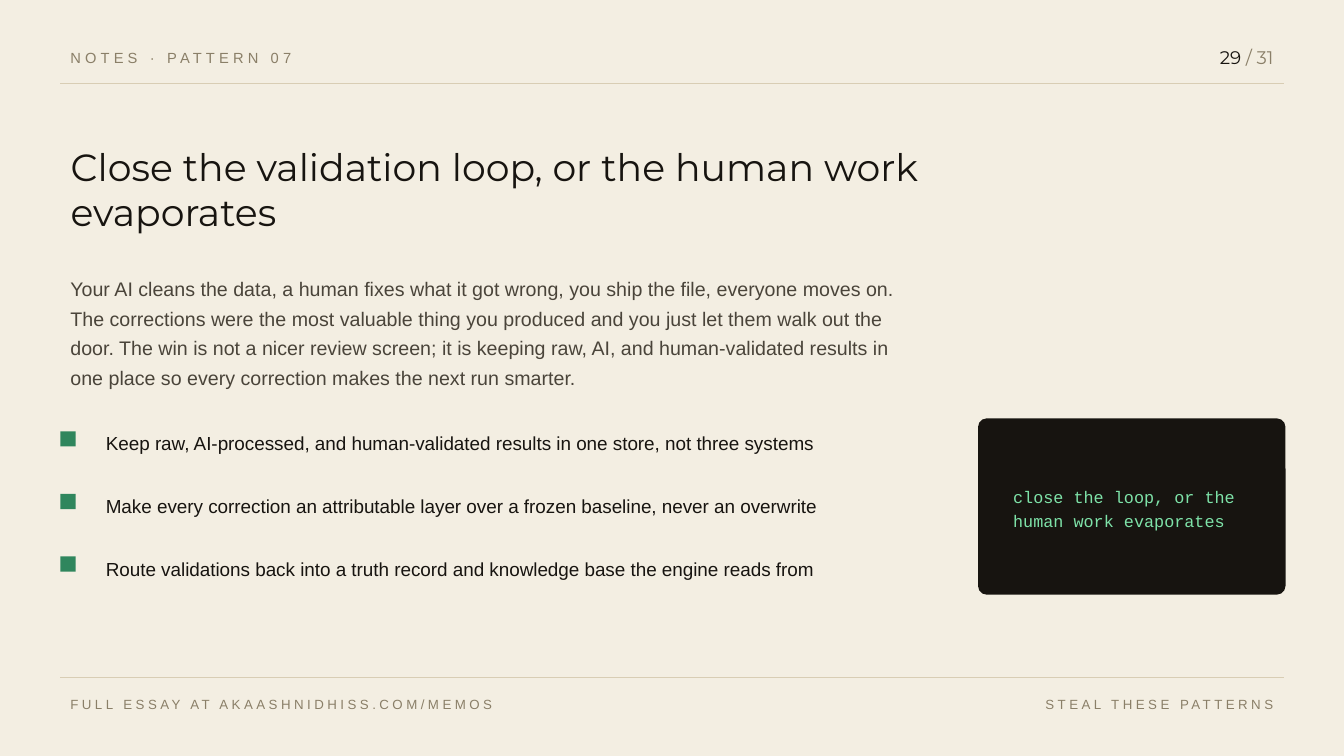
from dataclasses import dataclass

from lxml.etree import SubElement
from pptx import Presentation
from pptx.dml.color import RGBColor as Color
from pptx.enum.shapes import MSO_CONNECTOR as Connector, MSO_SHAPE as Shape
from pptx.enum.text import MSO_ANCHOR as Anchor, MSO_AUTO_SIZE as AutoSize, PP_ALIGN as Align
from pptx.oxml.ns import qn
from pptx.util import Inches, Pt


@dataclass(frozen=True)
class Theme:
    paper: Color = Color.from_string("F3EEE2")
    ink: Color = Color.from_string("171410")
    body: Color = Color.from_string("4A443A")
    muted: Color = Color.from_string("8A7F68")
    rule: Color = Color.from_string("D8CDB4")
    marker: Color = Color.from_string("2F865D")
    code: Color = Color.from_string("7EE2A8")
    display_font: str = "Montserrat"
    text_font: str = "Arial"
    code_font: str = "Courier New"
    title_size: float = 27
    lead_size: float = 14
    list_size: float = 13.5
    page_size: float = 13
    code_size: float = 12
    header_size: float = 10.5
    footer_size: float = 9.5


theme = Theme()

# Grid of square cells, ten to the inch
COLUMNS, ROWS = 133.3, 75
MARGIN = 6
RIGHT = COLUMNS - MARGIN
CONTENT = RIGHT - MARGIN
LIST_TOP, LIST_PITCH, LIST_ROW = 41.5, 6.2, 5


def cells(*counts):
    return [Inches(count / 10) for count in counts]


def write(shape, paragraphs, font, size, line_spacing=1.0, gap=0, align=Align.LEFT, tracking=0):
    """Fill a shape with paragraphs, each a list of (text, colour) runs."""
    frame = shape.text_frame
    frame.word_wrap = True
    frame.auto_size = AutoSize.NONE
    frame.vertical_anchor = Anchor.MIDDLE
    for index, runs in enumerate(paragraphs):
        paragraph = frame.add_paragraph() if index else frame.paragraphs[0]
        properties = paragraph._p.get_or_add_pPr()
        properties.set("marL", "0")
        properties.set("indent", "0")
        SubElement(properties, qn("a:buNone"))
        paragraph.alignment = align
        paragraph.line_spacing = line_spacing
        paragraph.space_before = Pt(gap if index else 0)
        for text, color in runs:
            run = paragraph.add_run()
            run.text = text
            run.font.name = font
            run.font.size = Pt(size)
            run.font.color.rgb = color
            if tracking:
                run._r.get_or_add_rPr().set("spc", str(int(tracking * 100)))


presentation = Presentation()
presentation.slide_width, presentation.slide_height = cells(COLUMNS, ROWS)
slide = presentation.slides.add_slide(presentation.slide_layouts[1])
slide.background.fill.solid()
slide.background.fill.fore_color.rgb = theme.paper
shapes = slide.shapes

# Header and footer labels
header = shapes.add_textbox(*cells(MARGIN, 4.2, 95, 3))
write(header, [[("NOTES · PATTERN 07", theme.muted)]],
      theme.text_font, theme.header_size, tracking=3)
page_number = shapes.add_textbox(*cells(RIGHT - 14, 4, 14, 3.4))
write(page_number, [[("29", theme.ink), (" / 31", theme.muted)]],
      theme.display_font, theme.page_size, align=Align.RIGHT)
for text, left, width, align in [
    ("FULL ESSAY AT AKAASHNIDHISS.COM/MEMOS", MARGIN, 86, Align.LEFT),
    ("STEAL THESE PATTERNS", RIGHT - 42, 42, Align.RIGHT),
]:
    footer = shapes.add_textbox(*cells(left, 68.4, width, 3))
    write(footer, [[(text, theme.muted)]],
          theme.text_font, theme.footer_size, align=align, tracking=2.5)

# Hairlines below the header and above the footer
for row in (8.25, 67.25):
    hairline = shapes.add_connector(Connector.STRAIGHT, *cells(MARGIN, row, RIGHT, row))
    hairline.line.color.rgb = theme.rule
    hairline.line.width = Pt(0.75)
    SubElement(hairline._element.spPr, qn("a:effectLst"))

# Title and lead paragraph
title = shapes.title
title.left, title.top, title.width, title.height = cells(MARGIN, 12, 96, 13.5)
write(title, [[("Close the validation loop, or the human work evaporates", theme.ink)]],
      theme.display_font, theme.title_size)
lead = shapes.add_textbox(*cells(MARGIN, 27.5, 86, 10.5))
lead_text = (
    "Your AI cleans the data, a human fixes what it got wrong, you ship the file, "
    "everyone moves on. The corrections were the most valuable thing you produced and "
    "you just let them walk out the door. The win is not a nicer review screen; it is "
    "keeping raw, AI, and human-validated results in one place so every correction "
    "makes the next run smarter."
)
write(lead, [[(lead_text, theme.body)]], theme.text_font, theme.lead_size, line_spacing=1.25)

# Action list, one row per square marker
actions = [
    "Keep raw, AI-processed, and human-validated results in one store, not three systems",
    "Make every correction an attributable layer over a frozen baseline, never an overwrite",
    "Route validations back into a truth record and knowledge base the engine reads from",
]
action_list = slide.placeholders[1]
list_height = LIST_PITCH * (len(actions) - 1) + LIST_ROW
action_list.left, action_list.top, action_list.width, action_list.height = cells(
    MARGIN + 3.5, LIST_TOP, 86, list_height)
line_height = theme.list_size * 1.15
write(action_list, [[(action, theme.ink)] for action in actions],
      theme.text_font, theme.list_size, gap=round(LIST_PITCH * 7.2 - line_height, 1))
for index in range(len(actions)):
    marker = shapes.add_shape(
        Shape.RECTANGLE, *cells(MARGIN, LIST_TOP + 1.3 + index * LIST_PITCH, 1.5, 1.5))
    marker.shadow.inherit = False
    marker.fill.solid()
    marker.fill.fore_color.rgb = theme.marker
    marker.line.fill.background()

# Dark card with the takeaway
card = shapes.add_shape(Shape.ROUNDED_RECTANGLE, *cells(97, LIST_TOP, 30.5, 17.5))
card.adjustments[0] = 0.05
card.shadow.inherit = False
card.fill.solid()
card.fill.fore_color.rgb = theme.ink
card.line.fill.background()
takeaway = shapes.add_textbox(*cells(97 + 2.5, LIST_TOP + 2.5, 25.5, 12.5))
write(takeaway, [[("close the loop, or the human work evaporates", theme.code)]],
      theme.code_font, theme.code_size, line_spacing=1.2)

presentation.save("out.pptx")
